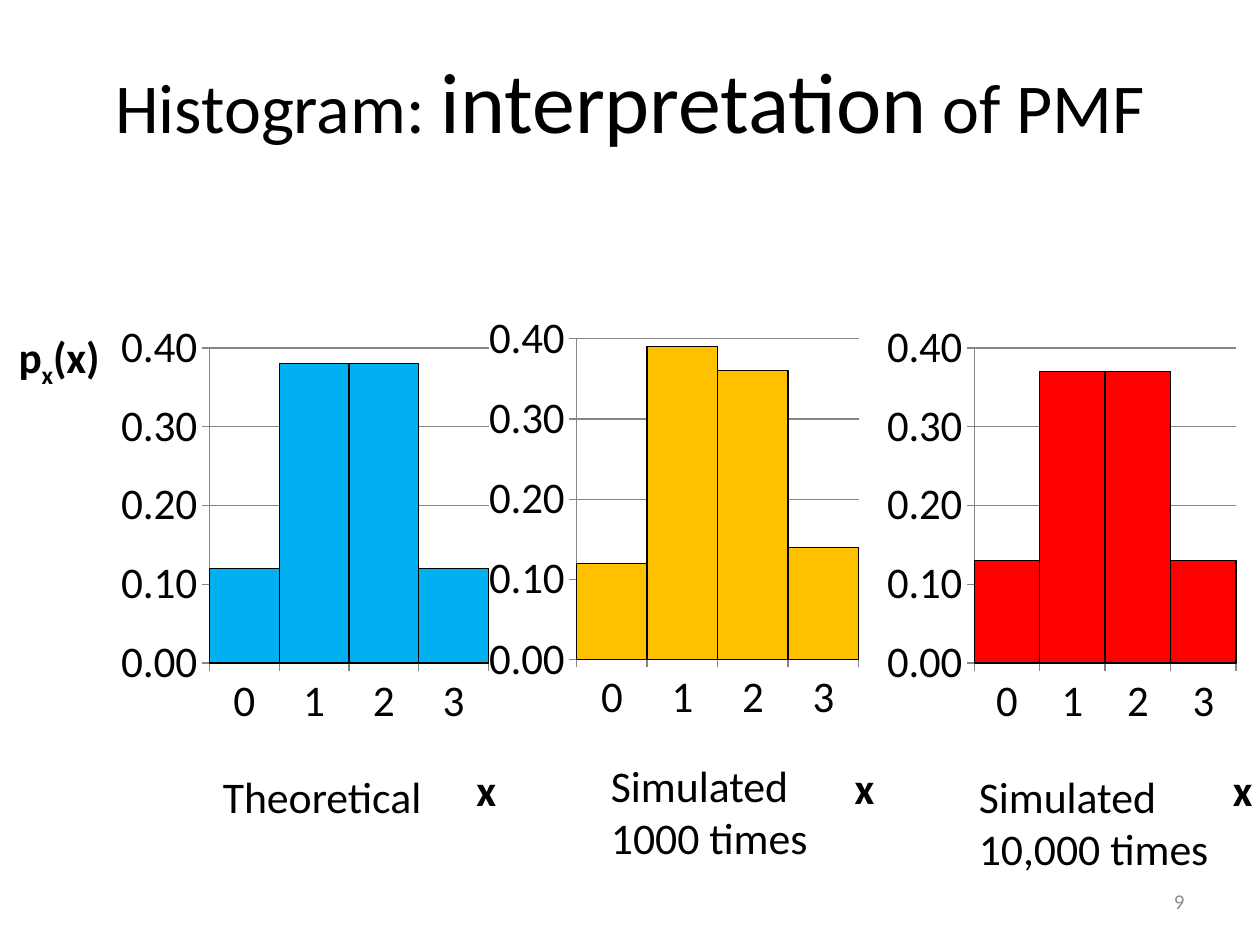
import pptx
import pptx.chart.data
import pptx.dml.color
import pptx.enum.chart
import pptx.enum.text
import pptx.oxml
import pptx.util
from pptx.oxml.ns import nsdecls, qn

FONT = "Calibri"
LABEL_SIZE = 25
BLACK = "000000"
GRAY = "868686"


def rgb(color):
    return pptx.dml.color.RGBColor.from_string(color)


def inches(*lengths):
    return [pptx.util.Inches(v) for v in lengths]


def set_font(font, size, color=BLACK, bold=False):
    font.name = FONT
    font.size = pptx.util.Pt(size)
    font.bold = bold
    font.color.rgb = rgb(color)


def set_line(line, color, width=0.75):
    line.color.rgb = rgb(color)
    line.width = pptx.util.Pt(width)


def set_layout(parent, index, inner=False, **shares):
    for old in parent.findall(qn("c:layout")):
        parent.remove(old)
    target = '<c:layoutTarget val="inner"/>' if inner else ""
    modes = '<c:xMode val="edge"/><c:yMode val="edge"/>'
    values = "".join(f'<c:{k} val="{v}"/>' for k, v in shares.items())
    parent.insert(index, pptx.oxml.parse_xml(
        f'<c:layout {nsdecls("c")}><c:manualLayout>{target}{modes}{values}'
        "</c:manualLayout></c:layout>"))


def add_axis_title(axis, parts, x, y):
    tf = axis.axis_title.text_frame
    p = tf.paragraphs[0]
    set_font(p.font, LABEL_SIZE, bold=True)
    for text, subscript in parts:
        r = p.add_run()
        r.text = text
        set_font(r.font, LABEL_SIZE, bold=True)
        if subscript:
            r.font._element.set("baseline", "-25000")
    body = tf._txBody.bodyPr
    body.set("rot", "0")
    body.set("vert", "horz")
    set_layout(axis.axis_title._element, 1, x=x, y=y)


def add_histogram(s, box, values, color, plot, title_at):
    data = pptx.chart.data.CategoryChartData(number_format="0.00")
    data.categories = ["0", "1", "2", "3"]
    data.add_series("Series 1", values)
    kind = pptx.enum.chart.XL_CHART_TYPE.COLUMN_CLUSTERED
    chart = s.shapes.add_chart(kind, *inches(*box), data).chart
    chart.has_title = False
    chart.has_legend = False
    set_font(chart.font, 10)

    bars = chart.plots[0]
    bars.gap_width = 0
    bars.vary_by_categories = False
    series = bars.series[0]
    series.format.fill.solid()
    series.format.fill.fore_color.rgb = rgb(color)
    set_line(series.format.line, BLACK)

    for axis in (chart.category_axis, chart.value_axis):
        axis.major_tick_mark = pptx.enum.chart.XL_TICK_MARK.OUTSIDE
        set_font(axis.tick_labels.font, LABEL_SIZE)
        set_line(axis.format.line, GRAY)
    axis = chart.value_axis
    axis.minimum_scale, axis.maximum_scale, axis.major_unit = 0, 0.4, 0.1
    axis.tick_labels.number_format = "#,##0.00"
    axis.tick_labels.number_format_is_linked = False
    axis.has_major_gridlines = True
    set_line(axis.major_gridlines.format.line, GRAY)

    x, y, w, h = plot
    plot_area = chart._chartSpace.chart.plotArea
    set_layout(plot_area, 0, inner=True, x=x, y=y, w=w, h=h)
    add_axis_title(chart.category_axis, [("x", False)], *title_at)
    return chart


def add_text(s, box, lines, size=LABEL_SIZE, color=BLACK, align=None):
    tf = s.shapes.add_textbox(*inches(*box)).text_frame
    tf.word_wrap = align is not None
    for i, line in enumerate(lines):
        p = tf.paragraphs[0] if i == 0 else tf.add_paragraph()
        p.text = line
        p.alignment = align
        set_font(p.font, size, color)
    return tf


def add_title(s, parts):
    title = s.shapes.title
    title.left, title.top, title.width, title.height = inches(0.5, 0.25, 9, 1.08)
    tf = title.text_frame
    tf.vertical_anchor = pptx.enum.text.MSO_ANCHOR.MIDDLE
    p = tf.paragraphs[0]
    p.alignment = pptx.enum.text.PP_ALIGN.CENTER
    for text, size in parts:
        r = p.add_run()
        r.text = text
        set_font(r.font, size)


def main():
    prs = pptx.Presentation()
    prs.slide_width, prs.slide_height = inches(10, 7.5)
    s = prs.slides.add_slide(prs.slide_layouts[5])
    add_title(s, [("Histogram: ", 40), ("interpretation", 49), (" of PMF", 40)])

    theoretical = add_histogram(
        s, (0, 2.47, 4, 4.17), (0.12, 0.38, 0.38, 0.12), "00B0F0",
        (0.42, 0.07, 0.56, 0.6), (0.94, 0.84))
    add_axis_title(theoretical.value_axis,
                   [("p", False), ("x", True), ("(x)", False)], 0.03, 0.03)
    add_histogram(
        s, (3.83, 2.39, 3.17, 4.25), (0.12, 0.39, 0.36, 0.14), "FFC000",
        (0.24, 0.07, 0.72, 0.6), (0.93, 0.84))
    add_histogram(
        s, (7, 2.47, 3, 4.17), (0.13, 0.37, 0.37, 0.13), "FF0000",
        (0.25, 0.07, 0.71, 0.6), (0.93, 0.84))

    add_text(s, (1.67, 6.06, 1.8, 0.52), ["Theoretical"])
    add_text(s, (4.75, 5.97, 1.78, 0.94), ["Simulated", "1000 times"])
    add_text(s, (7.67, 6.06, 2.04, 0.94), ["Simulated", "10,000 times"])
    number = add_text(s, (7.17, 6.95, 2.33, 0.4), ["9"], 12, "8C8C8C",
                      pptx.enum.text.PP_ALIGN.RIGHT)
    number.vertical_anchor = pptx.enum.text.MSO_ANCHOR.MIDDLE
    prs.save("out.pptx")


if __name__ == "__main__":
    main()
